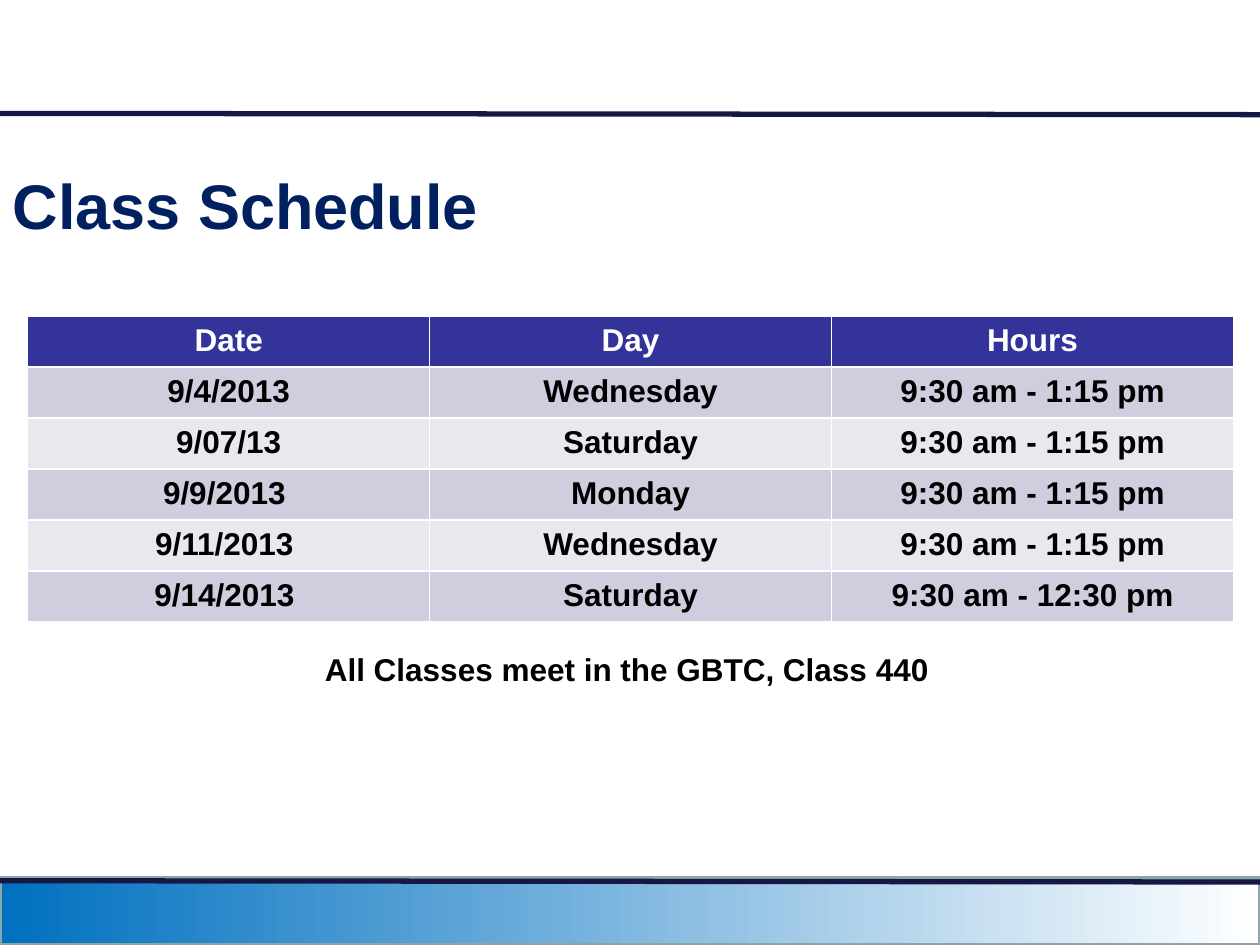
from lxml.etree import SubElement
from pptx import Presentation
from pptx.dml.color import RGBColor
from pptx.enum.shapes import MSO_CONNECTOR, MSO_SHAPE
from pptx.enum.text import MSO_ANCHOR, MSO_AUTO_SIZE, PP_ALIGN
from pptx.oxml.ns import qn
from pptx.util import Inches, Pt


def paint(color_format, value):
    color_format.rgb = RGBColor.from_string(value)


def style(paragraph, size, color, align):
    paragraph.alignment = align
    formats = {"name": "Arial", "size": Pt(size), "bold": True}
    for attribute, value in formats.items():
        setattr(paragraph.font, attribute, value)
    paint(paragraph.font.color, color)


presentation = Presentation()
presentation.slide_width = Inches(10)
presentation.slide_height = Inches(7.5)
slide = presentation.slides.add_slide(presentation.slide_layouts[5])

footer_band = slide.shapes.add_shape(
    MSO_SHAPE.RECTANGLE, Inches(0), Inches(6.97), Inches(10), Inches(0.53))
footer_band.shadow.inherit = False
footer_band.fill.gradient()
footer_band.fill.gradient_angle = 0
for stop, color, position in zip(
        footer_band.fill.gradient_stops, ("0070C0", "FFFFFF"), (0, 1)):
    paint(stop.color, color)
    stop.position = position
paint(footer_band.line.color, "8AA6A8")
footer_band.line.width = Pt(2)

for start, end in ((6.99, 7), (0.9, 0.91)):
    rule = slide.shapes.add_connector(
        MSO_CONNECTOR.STRAIGHT, Inches(0), Inches(start), Inches(10), Inches(end))
    paint(rule.line.color, "171745")
    rule.line.width = Pt(3)
    SubElement(rule._element.spPr, qn("a:effectLst"))

heading = slide.shapes.title
placement = {"left": 0, "top": 1.14, "width": 9.58, "height": 0.97}
for attribute, value in placement.items():
    setattr(heading, attribute, Inches(value))
heading.text_frame.text = "Class Schedule"
heading.text_frame.vertical_anchor = MSO_ANCHOR.MIDDLE
style(heading.text_frame.paragraphs[0], 36, "002060", PP_ALIGN.LEFT)

sessions = [
    ("Date", "Day", "Hours"),
    ("9/4/2013", "Wednesday", "9:30 am - 1:15 pm"),
    ("9/07/13", "Saturday", "9:30 am - 1:15 pm"),
    ("9/9/2013 ", "Monday", "9:30 am - 1:15 pm"),
    ("9/11/2013 ", "Wednesday", "9:30 am - 1:15 pm"),
    ("9/14/2013 ", "Saturday", "9:30 am - 12:30 pm"),
]
schedule = slide.shapes.add_table(
    len(sessions), 3, Inches(0.22), Inches(2.51), Inches(9.57), Inches(2.43)).table
for row, session in enumerate(sessions):
    if row == 0:
        fill, ink = "333399", "FFFFFF"
    else:
        fill, ink = ("CECEDE" if row % 2 else "E8E8EF"), "000000"
    for column, entry in enumerate(session):
        cell = schedule.cell(row, column)
        cell.text = entry
        cell.fill.solid()
        paint(cell.fill.fore_color, fill)
        style(cell.text_frame.paragraphs[0], 18, ink, PP_ALIGN.CENTER)

location = slide.shapes.add_textbox(
    Inches(2.48), Inches(5.11), Inches(5.04), Inches(0.4)).text_frame
location.word_wrap = False
location.auto_size = MSO_AUTO_SIZE.SHAPE_TO_FIT_TEXT
location.text = "All Classes meet in the GBTC, Class 440"
style(location.paragraphs[0], 18, "000000", PP_ALIGN.LEFT)

presentation.save("out.pptx")
